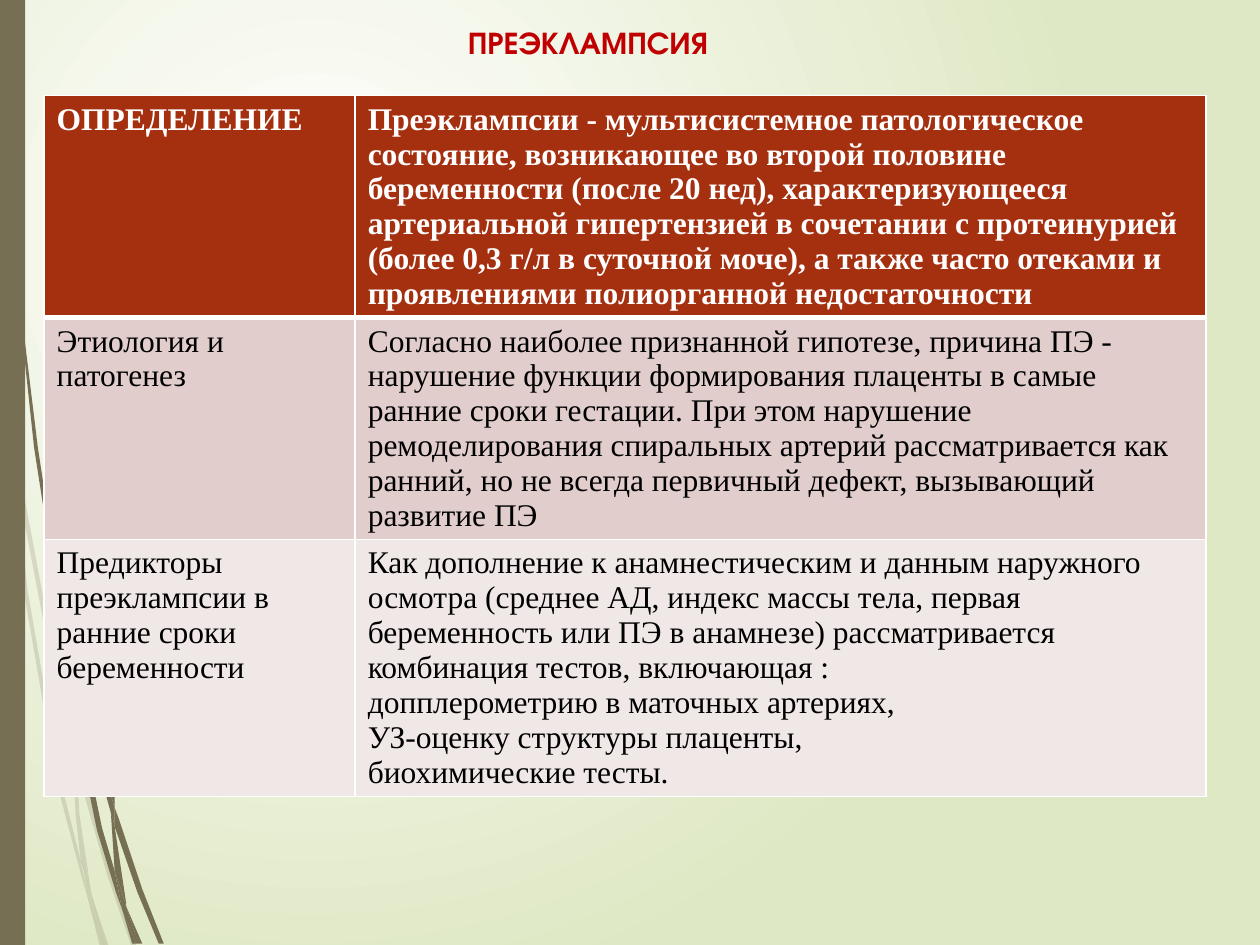
from lxml.etree import SubElement
from pptx import Presentation
from pptx.dml.color import RGBColor
from pptx.enum.shapes import MSO_SHAPE as Shape
from pptx.enum.text import MSO_ANCHOR as Anchor, MSO_AUTO_SIZE as AutoSize, PP_ALIGN as Align
from pptx.oxml.ns import qn
from pptx.util import Cm, Pt

COLORS = {
    "olive": "766F54", "white": "FFFFFF", "meadow": "DFE8C4", "title": "C00000",
    "header": "A53010", "band": "E1CDCC", "light": "F0E8E7", "black": "000000",
}
TITLE_FONT, TABLE_FONT = "TeX Gyre Adventor", "Times New Roman"

ROWS = [
    ("ОПРЕДЕЛЕНИЕ",
     "Преэклампсии - мультисистемное патологическое состояние, возникающее во второй "
     "половине беременности (после 20 нед), характеризующееся артериальной гипертензией "
     "в сочетании с протеинурией (более 0,3 г/л в суточной моче), а также часто отеками "
     "и проявлениями полиорганной недостаточности"),
    ("Этиология и патогенез",
     "Согласно наиболее признанной гипотезе, причина ПЭ - нарушение функции формирования "
     "плаценты в самые ранние сроки гестации. При этом нарушение ремоделирования "
     "спиральных артерий рассматривается как ранний, но не всегда первичный дефект, "
     "вызывающий развитие ПЭ"),
    ("Предикторы преэклампсии в ранние сроки беременности",
     "Как дополнение к анамнестическим и данным наружного осмотра (среднее АД, индекс "
     "массы тела, первая беременность или ПЭ в анамнезе) рассматривается комбинация "
     "тестов, включающая :\n"
     "допплерометрию в маточных артериях,\n"
     "УЗ-оценку структуры плаценты,\n"
     "биохимические тесты."),
]
ROW_STYLES = [("header", "white", True), ("band", "black", False), ("light", "black", False)]
COLUMN_WIDTHS = [6.27, 17.15]
ROW_HEIGHTS = [4.45, 4.45, 5.15]

# Grass blades: outline points on a grid of 0.0254 cm
GRASS_UNIT = Cm(2.54) / 100
PALE_BLADES = [
    [(8, 350), (6, 322), (0, 282), (0, 299), (7, 344)],
    [(40, 522), (59, 599), (59, 586), (43, 520), (10, 345), (12, 376)],
    [(64, 607), (61, 596), (61, 610), (85, 694), (104, 750), (108, 750), (88, 692)],
    [(83, 750), (86, 750), (73, 711)],
    [(64, 683), (48, 619), (22, 469), (12, 376), (8, 350), (19, 470), (45, 621), (64, 693),
     (70, 714), (69, 707)],
    [(58, 599), (60, 646), (64, 683), (67, 692), (73, 711), (72, 706), (63, 646), (61, 610),
     (61, 608)],
    [(61, 584), (76, 462), (111, 349), (159, 245), (187, 198), (201, 175), (217, 154),
     (217, 153), (201, 175), (186, 197), (158, 244), (110, 348), (75, 461), (59, 584),
     (59, 586), (61, 596)],
    [(70, 714), (79, 750), (82, 750)],
    [(61, 608), (61, 610), (61, 596), (59, 586), (58, 599)],
    [(67, 692), (65, 683), (69, 707), (70, 714), (82, 750), (83, 750), (73, 711)],
]
DARK_BLADES = [
    [(5, 110), (14, 233), (27, 355), (46, 477), (47, 481), (45, 457), (45, 453), (30, 355),
     (15, 232), (6, 109), (4, 48), (3, 0), (2, 0), (3, 48)],
    [(73, 592), (88, 645), (88, 633), (88, 631), (77, 590), (50, 472), (53, 505)],
    [(94, 649), (91, 641), (91, 656), (109, 708), (126, 749), (130, 749), (113, 706)],
    [(91, 691), (81, 657), (60, 556), (53, 505), (47, 477), (56, 557), (77, 659), (92, 708),
     (97, 722), (96, 717)],
    [(50, 472), (48, 453), (44, 349), (48, 245), (52, 193), (58, 141), (51, 193), (47, 245),
     (43, 349), (45, 449), (49, 472)],
    [(110, 749), (113, 749), (100, 719)],
    [(47, 477), (53, 505), (50, 472), (49, 472), (45, 449), (45, 453)],
    [(91, 633), (103, 552), (131, 476), (169, 406), (191, 374), (203, 359), (216, 344),
     (215, 344), (203, 358), (191, 373), (168, 405), (129, 474), (101, 551), (88, 631),
     (91, 641)],
    [(97, 722), (105, 749), (108, 749)],
    [(88, 645), (91, 691), (96, 706), (100, 719), (100, 716), (91, 656), (90, 651)],
    [(88, 645), (90, 651), (91, 656), (91, 641), (88, 631), (88, 633)],
    [(96, 706), (91, 691), (96, 717), (97, 722), (108, 749), (110, 749), (100, 719)],
]


def rgb(name):
    return RGBColor.from_string(COLORS[name])


def paint(shape, color, opacity=100):
    """Give a shape a flat fill without line or shadow."""
    shape.shadow.inherit = False
    shape.line.fill.background()
    shape.fill.solid()
    shape.fill.fore_color.rgb = rgb(color)
    if opacity < 100:
        for srgb in shape.element.spPr.iter(qn("a:srgbClr")):
            SubElement(srgb, qn("a:alpha"), val=str(opacity * 1000))


def format_font(font, color, **values):
    for name, value in values.items():
        setattr(font, name, value)
    font.color.rgb = rgb(color)


def set_background(slide):
    fill = slide.background.fill
    fill.gradient()
    for stop, color in zip(fill.gradient_stops, ("white", "meadow")):
        stop.color.rgb = rgb(color)
    gradient = next(slide.element.iter(qn("a:gradFill")))
    gradient.remove(gradient.find(qn("a:lin")))
    circle = SubElement(gradient, qn("a:path"), {"path": "circle"})
    SubElement(circle, qn("a:fillToRect"), l="50000", t="50000", r="100000", b="100000")


def add_grass(slide, blades, opacity):
    group = slide.shapes.add_group_shape()
    for points in blades:
        builder = group.shapes.build_freeform(*points[0], scale=GRASS_UNIT)
        builder.add_line_segments(points[1:], close=True)
        paint(builder.convert_to_shape(), "olive", opacity)


def set_title(slide, text):
    title = slide.shapes.title
    title.left, title.top, title.width, title.height = Cm(2.9), Cm(0.33), Cm(17.78), Cm(9.65)
    frame = title.text_frame
    frame.text = text
    frame.auto_size, frame.vertical_anchor = AutoSize.NONE, Anchor.TOP
    paragraph = frame.paragraphs[0]
    paragraph.alignment, paragraph.space_before = Align.CENTER, Pt(10)
    properties = paragraph._p.get_or_add_pPr()
    properties.set("marL", str(Cm(0.13)))
    properties.set("indent", "0")
    format_font(paragraph.runs[0].font, "title", name=TITLE_FONT, size=Pt(18), bold=True)


def set_borders(cell, widths):
    properties = cell._tc.get_or_add_tcPr()
    for side, width in widths.items():
        line = SubElement(properties, qn(f"a:ln{side}"), w=str(Pt(width)))
        fill = SubElement(line, qn("a:solidFill"))
        SubElement(fill, qn("a:srgbClr"), val=COLORS["white"])


def add_definition_table(slide):
    frame = slide.shapes.add_table(len(ROWS), len(COLUMN_WIDTHS), Cm(0.89), Cm(1.93),
                                   Cm(sum(COLUMN_WIDTHS)), Cm(sum(ROW_HEIGHTS)))
    table = frame.table
    for column, width in zip(table.columns, COLUMN_WIDTHS):
        column.width = Cm(width)
    for index, (texts, (fill, color, bold)) in enumerate(zip(ROWS, ROW_STYLES)):
        table.rows[index].height = Cm(ROW_HEIGHTS[index])
        # A thick rule separates the header from the body
        borders = {"L": 1, "R": 1, "T": 3 if index == 1 else 1, "B": 3 if index == 0 else 1}
        for cell, text in zip(table.rows[index].cells, texts):
            cell.text = text
            set_borders(cell, borders)
            cell.fill.solid()
            cell.fill.fore_color.rgb = rgb(fill)
            for paragraph in cell.text_frame.paragraphs:
                format_font(paragraph.runs[0].font, color,
                            name=TABLE_FONT, size=Pt(18), bold=bold)


def main():
    presentation = Presentation()
    presentation.slide_width, presentation.slide_height = Cm(25.4), Cm(19.05)
    slide = presentation.slides.add_slide(presentation.slide_layouts[5])

    # Backdrop
    set_background(slide)
    add_grass(slide, PALE_BLADES, 20)
    add_grass(slide, DARK_BLADES, 100)
    bar = slide.shapes.add_shape(Shape.RECTANGLE, 0, 0, Cm(0.51), presentation.slide_height)
    paint(bar, "olive")

    # Content
    set_title(slide, "ПРЕЭКЛАМПСИЯ")
    add_definition_table(slide)
    presentation.save("out.pptx")


if __name__ == "__main__":
    main()
